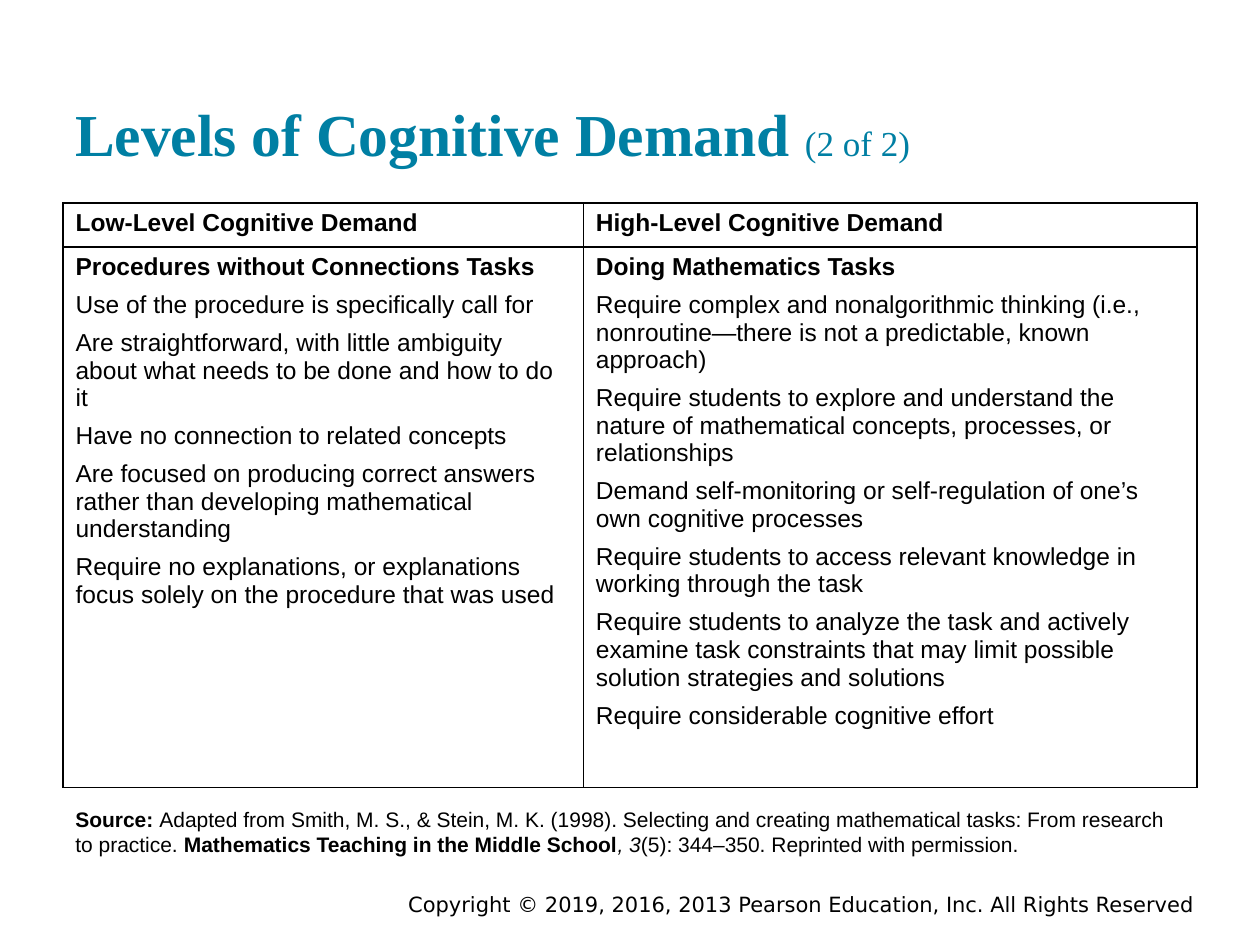
from lxml import etree
from pptx import Presentation
from pptx.dml.color import RGBColor
from pptx.enum.text import MSO_ANCHOR, PP_ALIGN
from pptx.oxml.ns import qn
from pptx.util import Inches, Pt

TOP, MIDDLE, BOTTOM = MSO_ANCHOR.TOP, MSO_ANCHOR.MIDDLE, MSO_ANCHOR.BOTTOM
LEFT, RIGHT = PP_ALIGN.LEFT, PP_ALIGN.RIGHT
COLORS = {"title": "007FA3", "text": "000000", "border": "000000"}
BODY_FONT = "Arial"

COLUMNS = [
    ("Low-Level Cognitive Demand", "Procedures without Connections Tasks", [
        "Use of the procedure is specifically call for",
        "Are straightforward, with little ambiguity about what needs to be done and how to do it",
        "Have no connection to related concepts",
        "Are focused on producing correct answers rather than developing mathematical understanding",
        "Require no explanations, or explanations focus solely on the procedure that was used",
    ]),
    ("High-Level Cognitive Demand", "Doing Mathematics Tasks", [
        "Require complex and nonalgorithmic thinking (i.e., nonroutine—there is not a predictable, known approach)",
        "Require students to explore and understand the nature of mathematical concepts, processes, or relationships",
        "Demand self-monitoring or self-regulation of one’s own cognitive processes",
        "Require students to access relevant knowledge in working through the task",
        "Require students to analyze the task and actively examine task constraints that may limit possible solution strategies and solutions",
        "Require considerable cognitive effort",
    ]),
]


def add_run(paragraph, text, size, name=BODY_FONT, color="text", bold=False, italic=False):
    """Append one formatted run to a paragraph."""
    run = paragraph.add_run()
    run.text = text
    font = run.font
    font.name, font.size, font.bold, font.italic = name, Pt(size), bold, italic
    font.color.rgb = RGBColor.from_string(COLORS[color])


def add_text_area(slide, box, anchor=TOP, align=LEFT, inset=0.1):
    """Add a wrapping text box and return its first paragraph."""
    frame = slide.shapes.add_textbox(*map(Inches, box)).text_frame
    frame.word_wrap = True
    frame.vertical_anchor = anchor
    frame.margin_left = frame.margin_right = Inches(0.1)
    frame.margin_top = frame.margin_bottom = Inches(inset)
    paragraph = frame.paragraphs[0]
    paragraph.alignment = align
    return paragraph


def add_title(slide, box):
    """Add the slide title with its part number."""
    paragraph = add_text_area(slide, box, anchor=BOTTOM)
    add_run(paragraph, "Levels of Cognitive Demand ", 34, "Times New Roman", "title", bold=True)
    add_run(paragraph, "(2 of 2)", 20, "Times New Roman", "title")


def style_cell(cell):
    """Give a cell thin borders on all sides and no fill."""
    properties = cell._tc.get_or_add_tcPr()
    for side in ("a:lnL", "a:lnR", "a:lnT", "a:lnB"):
        line = etree.SubElement(properties, qn(side), w=str(Pt(1)))
        fill = etree.SubElement(line, qn("a:solidFill"))
        etree.SubElement(fill, qn("a:srgbClr"), val=COLORS["border"])
    cell.fill.background()


def add_demand_table(slide, box):
    """Add the table that compares low and high cognitive demand."""
    left, top, width, height = box
    header_height, first_width = 0.35, 4.13
    table = slide.shapes.add_table(2, len(COLUMNS), *map(Inches, box)).table
    table.first_row = table.horz_banding = False
    for column, column_width in zip(table.columns, (first_width, width - first_width)):
        column.width = Inches(column_width)
    for row, row_height in zip(table.rows, (header_height, height - header_height)):
        row.height = Inches(row_height)
    for index, (heading, task_type, features) in enumerate(COLUMNS):
        header, body = table.cell(0, index), table.cell(1, index)
        style_cell(header)
        style_cell(body)
        add_run(header.text_frame.paragraphs[0], heading, 14, bold=True)
        add_run(body.text_frame.paragraphs[0], task_type, 14, bold=True)
        for feature in features:
            paragraph = body.text_frame.add_paragraph()
            paragraph.space_before = Pt(6)
            add_run(paragraph, feature, 14)


def add_source(slide, box):
    """Add the source citation below the table."""
    paragraph = add_text_area(slide, box)
    add_run(paragraph, "Source: ", 12, bold=True)
    add_run(paragraph, "Adapted from Smith, M. S., & Stein, M. K. (1998). Selecting and creating "
            "mathematical tasks: From research to practice. ", 12)
    add_run(paragraph, "Mathematics Teaching in the Middle School", 12, bold=True)
    add_run(paragraph, ", 3", 12, italic=True)
    add_run(paragraph, "(5): 344–350. Reprinted with permission.", 12)


def add_copyright(slide, box):
    """Add the right-aligned copyright line."""
    paragraph = add_text_area(slide, box, anchor=MIDDLE, align=RIGHT, inset=0)
    add_run(paragraph, "Copyright © 2019, 2016, 2013 Pearson Education, Inc. All Rights Reserved",
            12, "DejaVu Sans")


def main():
    """Build and save the slide."""
    presentation = Presentation()
    presentation.slide_width, presentation.slide_height = Inches(10), Inches(7.5)
    slide = presentation.slides.add_slide(presentation.slide_layouts[6])
    add_copyright(slide, (2.92, 7.05, 6.66, 0.25))
    add_title(slide, (0.5, 0.24, 9, 1.2))
    add_demand_table(slide, (0.5, 1.61, 9, 4.64))
    add_source(slide, (0.5, 6.3, 9, 0.54))
    presentation.save("out.pptx")


if __name__ == "__main__":
    main()
